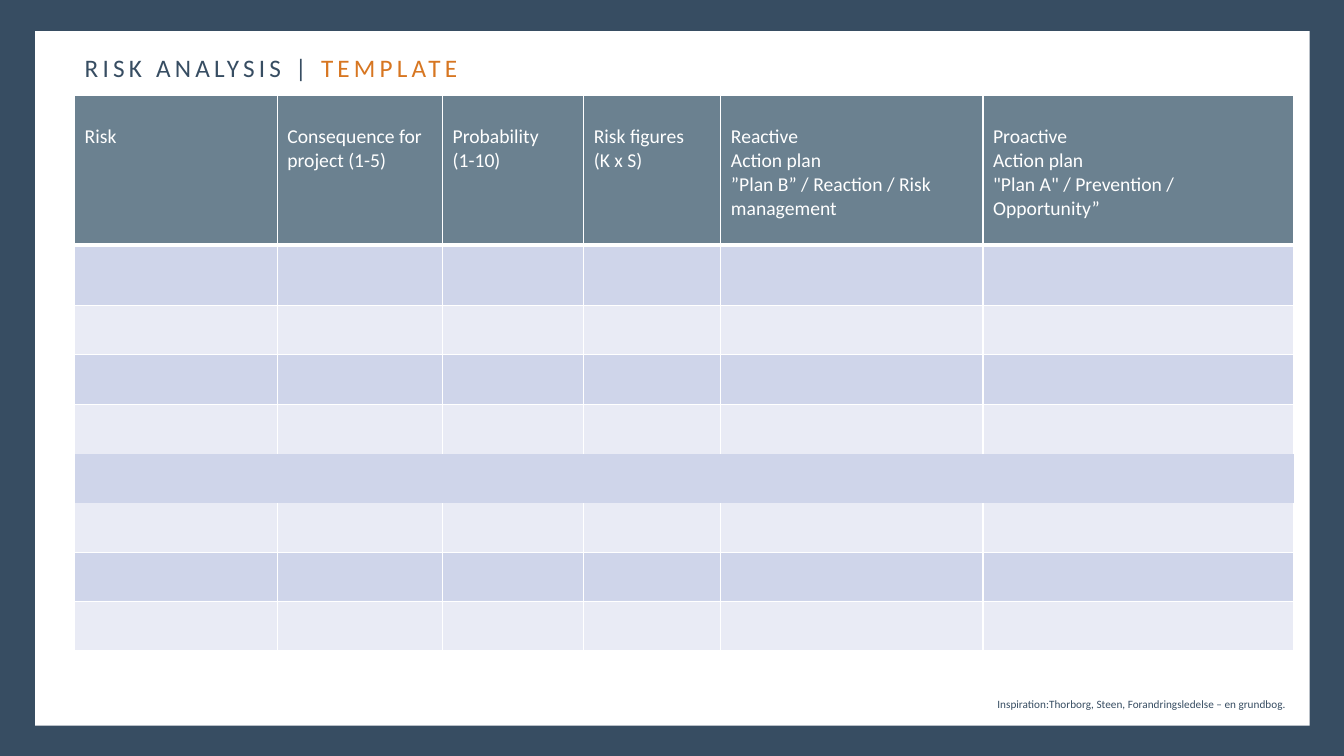
from lxml.etree import SubElement
from pptx import Presentation
from pptx.dml.color import RGBColor
from pptx.enum.shapes import MSO_SHAPE
from pptx.enum.text import MSO_ANCHOR, MSO_AUTO_SIZE, PP_ALIGN
from pptx.oxml.ns import qn
from pptx.util import Inches, Pt

COLORS = {
    "navy": "374D62", "orange": "D77621", "white": "FFFFFF",
    "header": "6B8190", "odd": "CFD5EA", "even": "E9EBF5",
}
TITLE = [("RISK ANALYSIS | ", "navy"), ("TEMPLATE", "orange")]
CREDIT = "Inspiration:Thorborg, Steen, Forandringsledelse – en grundbog. "
COLUMNS = [
    (2.01, ["Risk"]),
    (1.64, ["Consequence for project (1-5)"]),
    (1.4, ["Probability", "(1-10)"]),
    (1.36, ["Risk figures", "(K x S)"]),
    (2.6, ["Reactive", "Action plan", "”Plan B” / Reaction / Risk management"]),
    (3.08, ["Proactive", "Action plan", "\"Plan A\" / Prevention / Opportunity”"]),
]
ROW_HEIGHTS = [1.48, 0.6] + [0.49] * 7
SEAMLESS_ROW = 5
HEADER_TOP_MARGIN = 0.29
PANEL_BOX = (0.35, 0.31, 12.64, 6.89)
TITLE_BOX = (0.74, 0.47, 7.34, 0.4)
TABLE_ORIGIN = (0.74, 0.95)
CREDIT_BOX = (9.1, 6.87, 3.78, 0.24)


def rgb(color):
    return RGBColor.from_string(COLORS[color])


def inches(lengths):
    return [Inches(length) for length in lengths]


def style(font, size, color):
    formats = {"name": "Calibri", "size": Pt(size), "bold": False}
    for attribute, value in formats.items():
        setattr(font, attribute, value)
    font.color.rgb = rgb(color)


def add_borders(cell, widths):
    """Draw white borders; a side of width 0 gets no line."""
    properties = cell._tc.get_or_add_tcPr()
    for side, width in widths.items():
        line = SubElement(properties, qn(f"a:ln{side}"), w=str(Pt(width)))
        if width:
            fill = SubElement(line, qn("a:solidFill"))
            SubElement(fill, qn("a:srgbClr"), val=COLORS["white"])
        else:
            SubElement(line, qn("a:noFill"))


def border_widths(row):
    if row == SEAMLESS_ROW:
        return dict.fromkeys("LRTB", 0)
    return {
        "L": 1,
        "R": 1,
        "T": 3 if row == 1 else 0 if row == SEAMLESS_ROW + 1 else 1,
        "B": 3 if row == 0 else 0 if row == SEAMLESS_ROW - 1 else 1,
    }


def add_title(slide):
    title = slide.shapes.title
    title.left, title.top, title.width, title.height = inches(TITLE_BOX)
    frame = title.text_frame
    formats = {"word_wrap": True, "auto_size": MSO_AUTO_SIZE.NONE,
               "vertical_anchor": MSO_ANCHOR.TOP}
    for attribute, value in formats.items():
        setattr(frame, attribute, value)
    paragraph = frame.paragraphs[0]
    paragraph.alignment = PP_ALIGN.LEFT
    for words, color in TITLE:
        run = paragraph.add_run()
        run.text = words
        style(run.font, 18, color)
        run.font._element.set("spc", "300")
    return title


def add_panel(slide, title):
    """Place the white panel behind the title."""
    panel = slide.shapes.add_shape(MSO_SHAPE.RECTANGLE, *inches(PANEL_BOX))
    panel.shadow.inherit = False
    panel.fill.solid()
    panel.fill.fore_color.rgb = rgb("white")
    panel.line.fill.background()
    title.element.addprevious(panel.element)


def add_risk_table(slide):
    widths = [width for width, _ in COLUMNS]
    table = slide.shapes.add_table(
        len(ROW_HEIGHTS), len(COLUMNS),
        *inches((*TABLE_ORIGIN, sum(widths), sum(ROW_HEIGHTS)))).table
    for column, width in zip(table.columns, widths):
        column.width = Inches(width)
    for index, height in enumerate(ROW_HEIGHTS):
        table.rows[index].height = Inches(height)
        color = "header" if index == 0 else "odd" if index % 2 else "even"
        for cell in table.rows[index].cells:
            add_borders(cell, border_widths(index))
            cell.fill.solid()
            cell.fill.fore_color.rgb = rgb(color)
    for cell, (_, heading) in zip(table.rows[0].cells, COLUMNS):
        cell.margin_top = Inches(HEADER_TOP_MARGIN)
        cell.text = "\n".join(heading)
        for paragraph in cell.text_frame.paragraphs:
            style(paragraph.runs[0].font, 14, "white")


def add_credit(slide):
    frame = slide.shapes.add_textbox(*inches(CREDIT_BOX)).text_frame
    frame.word_wrap = True
    paragraph = frame.paragraphs[0]
    paragraph.alignment = PP_ALIGN.RIGHT
    run = paragraph.add_run()
    run.text = CREDIT
    style(run.font, 8, "navy")


def main():
    deck = Presentation()
    deck.slide_width, deck.slide_height = inches((13.33, 7.5))
    slide = deck.slides.add_slide(deck.slide_layouts[5])
    slide.background.fill.solid()
    slide.background.fill.fore_color.rgb = rgb("navy")
    add_panel(slide, add_title(slide))
    add_credit(slide)
    add_risk_table(slide)
    deck.save("out.pptx")


if __name__ == "__main__":
    main()
